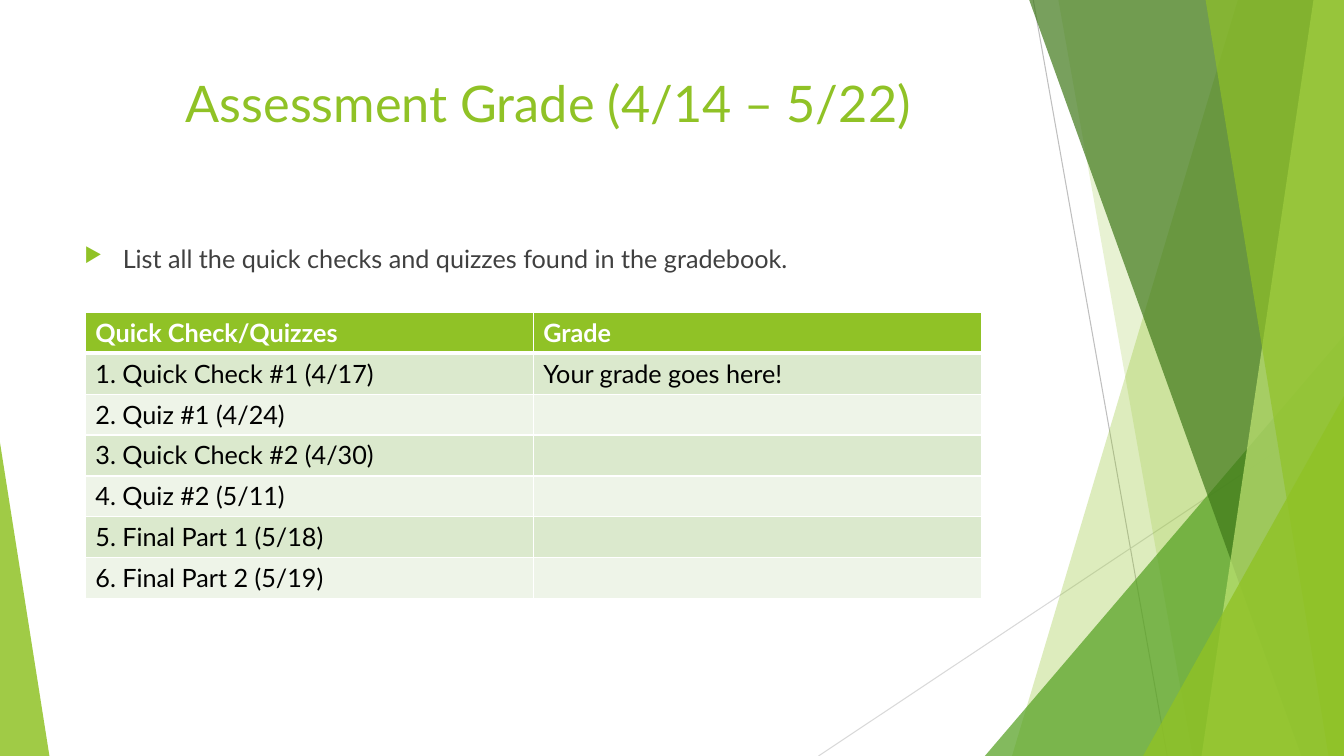
from lxml.etree import SubElement
from pptx import Presentation
from pptx.dml.color import RGBColor
from pptx.enum.shapes import MSO_CONNECTOR as Connector, MSO_SHAPE as Preset
from pptx.enum.text import MSO_ANCHOR as Anchor, PP_ALIGN as Align
from pptx.oxml.ns import qn
from pptx.util import Inches, Pt

WHITE = RGBColor(0xFF, 0xFF, 0xFF)
BLACK = RGBColor(0x00, 0x00, 0x00)
CHARCOAL = RGBColor(0x40, 0x40, 0x40)
GRAY = RGBColor(0xBF, 0xBF, 0xBF)
LIGHT_GRAY = RGBColor(0xD9, 0xD9, 0xD9)
LIME = RGBColor(0x90, 0xC2, 0x26)
PALE_LIME = RGBColor(0xC0, 0xE4, 0x74)
GREEN = RGBColor(0x54, 0xA0, 0x21)
DARK_GREEN = RGBColor(0x3F, 0x78, 0x19)
BANDS = (RGBColor(0xEE, 0xF4, 0xE8), RGBColor(0xDB, 0xE9, 0xCD))

FACETS_BEFORE = [(92.1, 75.3, LIME, 30), (78.75, 88.73, LIME, 20)]
FACETS_AFTER = [
    (76.58, 96.83, DARK_GREEN, 70),
    (97.73, 89.4, PALE_LIME, 70),
    (89.7, 98.85, LIME, 65),
]
GRADES = [
    ("Quick Check/Quizzes", "Grade"),
    ("1. Quick Check #1 (4/17)", "Your grade goes here!"),
    ("2. Quiz #1 (4/24)", ""),
    ("3. Quick Check #2 (4/30)", ""),
    ("4. Quiz #2 (5/11)", ""),
    ("5. Final Part 1 (5/18)", ""),
    ("6. Final Part 2 (5/19)", ""),
]


class GradeSlide:
    font_name = "Lato"
    grid_size = 100

    def __init__(self, presentation):
        self.width = presentation.slide_width
        self.height = presentation.slide_height
        self.slide = presentation.slides.add_slide(presentation.slide_layouts[5])
        self.shapes = self.slide.shapes

    def x(self, column):
        return round(self.width * column / self.grid_size)

    def y(self, row):
        return round(self.height * row / self.grid_size)

    def box(self, left, top, width, height):
        return self.x(left), self.y(top), self.x(width), self.y(height)

    def add_text(self, paragraph, text, size, color, bold=False):
        run = paragraph.add_run()
        run.text = text
        formats = {"name": self.font_name, "size": Pt(size), "bold": bold}
        for name, value in formats.items():
            setattr(run.font, name, value)
        run.font.color.rgb = color

    def line(self, start, end, color):
        connector = self.shapes.add_connector(
            Connector.STRAIGHT, self.x(start[0]), self.y(start[1]),
            self.x(end[0]), self.y(end[1]))
        connector.line.color.rgb = color
        connector.line.width = Pt(0.75)
        SubElement(connector._element.spPr, qn("a:effectLst"))

    def paint(self, shape, color, opacity):
        shape.shadow.inherit = False
        shape.line.fill.background()
        shape.fill.solid()
        shape.fill.fore_color.rgb = color
        tint = shape._element.spPr.find(qn("a:solidFill"))[0]
        SubElement(tint, qn("a:alpha"), val=str(opacity * 1000))

    def facet(self, top_left, bottom_left, color, opacity):
        builder = self.shapes.build_freeform(self.x(top_left), 0)
        corners = [(self.width, 0), (self.width, self.height),
                   (self.x(bottom_left), self.height)]
        builder.add_line_segments(corners, close=True)
        self.paint(builder.convert_to_shape(), color, opacity)

    def triangle(self, left, top, width, apex, color, opacity):
        shape = self.shapes.add_shape(
            Preset.ISOSCELES_TRIANGLE,
            *self.box(left, top, width, self.grid_size - top))
        shape.adjustments[0] = apex
        self.paint(shape, color, opacity)

    def place(self, shape, box):
        for name, value in zip(("left", "top", "width", "height"), self.box(*box)):
            setattr(shape, name, value)

    def title(self, text, box):
        shape = self.shapes.title
        self.place(shape, box)
        frame = shape.text_frame
        frame.word_wrap = True
        frame.vertical_anchor = Anchor.TOP
        paragraph = frame.paragraphs[0]
        paragraph.alignment = Align.CENTER
        self.add_text(paragraph, text, 36, LIME)

    def bullet(self, text, box):
        frame = self.shapes.add_textbox(*self.box(*box)).text_frame
        frame.word_wrap = True
        paragraph = frame.paragraphs[0]
        paragraph.space_before = Pt(10)
        self.add_text(paragraph, text, 18, CHARCOAL)
        properties = paragraph._p.get_or_add_pPr()
        indent = Inches(0.38)
        properties.set("marL", str(indent))
        properties.set("indent", str(-indent))
        bullet_color = SubElement(properties, qn("a:buClr"))
        SubElement(bullet_color, qn("a:srgbClr"), val=str(LIME))
        SubElement(properties, qn("a:buSzPct"), val="80000")
        SubElement(properties, qn("a:buChar"), char="▶")

    def borders(self, cell, top, bottom):
        properties = cell._tc.get_or_add_tcPr()
        for side, width in {"L": 1, "R": 1, "T": top, "B": bottom}.items():
            border = SubElement(properties, qn(f"a:ln{side}"), w=str(Pt(width)))
            fill = SubElement(border, qn("a:solidFill"))
            SubElement(fill, qn("a:srgbClr"), val=str(WHITE))

    def table(self, records, box):
        table = self.shapes.add_table(
            len(records), len(records[0]), *self.box(*box)).table
        table.horz_banding = False
        for row, record in enumerate(records):
            header = row == 0
            for column, text in enumerate(record):
                cell = table.cell(row, column)
                self.borders(cell, 3 if row == 1 else 1, 3 if header else 1)
                cell.fill.solid()
                cell.fill.fore_color.rgb = LIME if header else BANDS[row % 2]
                if text:
                    self.add_text(cell.text_frame.paragraphs[0], text, 18,
                                  WHITE if header else BLACK, header)


def main():
    presentation = Presentation()
    presentation.slide_width = Inches(13.33)
    presentation.slide_height = Inches(7.5)
    page = GradeSlide(presentation)

    page.line((76.88, 0), (86.85, 100), GRAY)
    page.line((100, 53.73), (60.9, 100), LIGHT_GRAY)
    for facet in FACETS_BEFORE:
        page.facet(*facet)
    page.triangle(73.28, 44.4, 26.72, 1, GREEN, 72)
    for facet in FACETS_AFTER:
        page.facet(*facet)
    page.triangle(85.05, 52.4, 14.95, 1, LIME, 80)
    page.triangle(0, 58.53, 3.68, 0, LIME, 85)

    page.title("Assessment Grade (4/14 – 5/22)", (5.55, 8.93, 70.5, 19.2))
    page.bullet("List all the quick checks and quizzes found in the gradebook.",
                (5.55, 31.47, 70.5, 56.53))
    page.table(GRADES, (6.35, 41.33, 66.65, 37.87))
    presentation.save("out.pptx")


if __name__ == "__main__":
    main()
